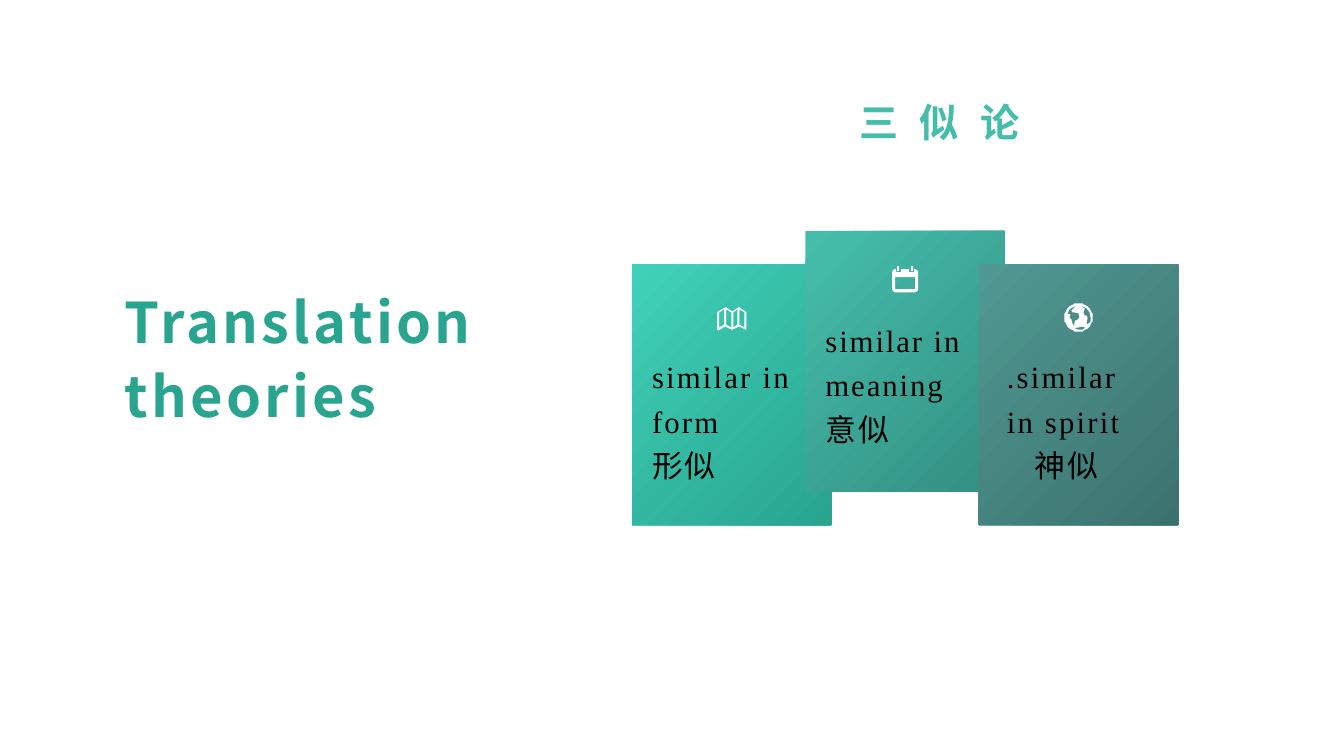
from math import cos, pi, sin

from lxml.etree import SubElement
from pptx import Presentation
from pptx.dml.color import RGBColor
from pptx.enum.shapes import MSO_SHAPE as Shape
from pptx.enum.text import MSO_ANCHOR as Anchor, PP_ALIGN as Align
from pptx.oxml.ns import qn
from pptx.util import Pt

SANS = "Noto Sans CJK SC"
SERIF = "Times New Roman"
ICON_UNIT = 0.72

CARD_LEFT, CARD_STEP = 451.44, 123.84
CARD_WIDTH, CARD_HEIGHT = 142.56, 186.48


def color(value):
    return RGBColor.from_string(value)


def rectangle(left, top, right, bottom):
    return [(left, top), (right, top), (right, bottom), (left, bottom)]


def map_icon():
    outline = [(28, 4), (22, 0), (21, 0), (15, 4), (9, 0), (8, 0), (1, 4), (0, 5), (0, 22),
               (1, 23), (8, 19), (14, 22), (15, 22), (22, 19), (28, 22), (29, 22), (29, 5)]
    panels = []
    for index in range(4):
        left = 2 + 6.8 * index
        start, end = (5, 2) if index % 2 == 0 else (2, 5)
        panels.append([(left, start), (left + 4.8, end),
                       (left + 4.8, end + 15), (left, start + 15)])
    return 29, [outline] + panels


def calendar_icon():
    body = [(3, 3), (4, 3), (4, 6), (9, 6), (9, 3), (17, 3), (17, 6), (22, 6), (22, 3),
            (23, 3), (25, 4), (26, 6), (26, 23), (25, 25), (23, 26), (3, 26), (1, 25),
            (0, 23), (0, 6), (1, 4)]
    return 26, [body, rectangle(3, 11, 23, 23), rectangle(5, 0, 7, 5), rectangle(19, 0, 21, 5)]


def globe_icon():
    disc = [(14 + 14 * cos(pi * step / 24), 14 + 14 * sin(pi * step / 24)) for step in range(48)]
    east = [(26, 14), (25.5, 18), (23, 21), (22.4, 19), (23, 15), (22, 12), (19.5, 11.5),
            (18.7, 9), (20, 6.5), (20, 5), (17.5, 4.5), (17, 3), (18, 3), (22, 5), (25, 9)]
    west = [(12, 2), (11, 3), (9, 5), (7, 7), (7.5, 9), (10, 8.7), (14, 10.5), (15, 14),
            (13, 15.5), (11, 17), (10.5, 19), (10, 23), (8, 20), (7, 16), (5, 14), (6, 11),
            (3, 10), (5, 6), (8, 3.5)]
    south = [(10, 25), (12, 24), (14, 24), (17, 23), (21, 24), (18, 25.5), (14, 26)]
    return 28, [disc, east, west, south]


def draw_icon(page, center, top, icon):
    width, outlines = icon
    builder = page.shapes.build_freeform(*outlines[0][0], scale=Pt(ICON_UNIT))
    builder.add_line_segments(outlines[0][1:], close=True)
    for outline in outlines[1:]:
        builder.move_to(*outline[0])
        builder.add_line_segments(outline[1:], close=True)
    shape = builder.convert_to_shape(Pt(center - width * ICON_UNIT / 2), Pt(top))
    shape.shadow.inherit = False
    shape.fill.solid()
    shape.fill.fore_color.rgb = color("FFFFFF")
    shape.line.fill.background()


def add_text(page, left, top, width, height, lines, font, size, tint, spacing, leading, bold=False):
    box = page.shapes.add_textbox(Pt(left), Pt(top), Pt(width), Pt(height))
    frame = box.text_frame
    frame.word_wrap = True
    frame.text = "\n".join(lines)
    for para in frame.paragraphs:
        para.line_spacing = leading
        for span in para.runs:
            span.font.name = font
            span.font.size = Pt(size)
            span.font.bold = bold
            span.font.color.rgb = color(tint)
            properties = span.font._element
            properties.set("spc", str(round(spacing * 100)))
            SubElement(properties, qn("a:ea")).set("typeface", SANS)
    return frame


def trim_margins(frame):
    frame.margin_left = frame.margin_right = Pt(5)
    frame.margin_top = frame.margin_bottom = Pt(2.2)


def draw_title(page, left, top, width, height):
    frame = add_text(page, left, top, width, height, ["Translation theories"],
                     SANS, 40, "28A48F", 2.4, 1.1, True)
    trim_margins(frame)
    frame.vertical_anchor = Anchor.BOTTOM


def draw_heading(page, left, top, width, height):
    frame = add_text(page, left, top, width, height, ["三 似 论"],
                     SERIF, 28, "45BDAB", 4.5, 1.2, True)
    trim_margins(frame)
    frame.paragraphs[0].alignment = Align.CENTER


def draw_card(page, left, top, width, height, stops):
    card = page.shapes.add_shape(Shape.ROUNDED_RECTANGLE, Pt(left), Pt(top), Pt(width), Pt(height))
    card.adjustments[0] = 0.005
    card.shadow.inherit = False
    card.line.fill.background()
    card.fill.gradient()
    card.fill.gradient_angle = 315
    for stop, position, tint in zip(card.fill.gradient_stops, (0.02, 1), stops):
        stop.position = position
        stop.color.rgb = color(tint)


def draw_caption(page, left, top, lines, spacing, indent):
    frame = add_text(page, left, top, 116.64, 118.08, lines, SERIF, 22, "000000", spacing, 1.2)
    frame.paragraphs[-1]._p.get_or_add_pPr().set("marL", str(Pt(indent)))


def draw_cards(page):
    cards = [
        (188.64, ("40D0B8", "28A48F"), map_icon(), 30.96,
         ["similar in form", "形似"], 7.2, 58.32, 1.6, 0),
        (164.88, ("45BDAB", "338F81"), calendar_icon(), 25.2,
         ["similar in meaning", "意似"], 7.2, 56.16, 1.4, 0),
        (188.64, ("509892", "3C726E"), globe_icon(), 28.08,
         [".similar in spirit", "神似"], 12.96, 58.32, 1.6, 20),
    ]
    lefts = [CARD_LEFT + CARD_STEP * index for index in range(len(cards))]
    for left, (top, stops, *_) in zip(lefts, cards):
        draw_card(page, left, top, CARD_WIDTH, CARD_HEIGHT, stops)
    for left, (top, _, icon, icon_top, lines, text_left, text_top, spacing, indent) in zip(lefts, cards):
        draw_icon(page, left + CARD_WIDTH / 2, top + icon_top, icon)
        draw_caption(page, left + text_left, top + text_top, lines, spacing, indent)


def main():
    deck = Presentation()
    deck.slide_width, deck.slide_height = Pt(960), Pt(540)
    page = deck.slides.add_slide(deck.slide_layouts[6])
    draw_title(page, 84.24, 144, 309.6, 164.16)
    draw_heading(page, 532.8, 61.2, 276.48, 82.8)
    draw_cards(page)
    deck.save("out.pptx")


if __name__ == "__main__":
    main()
